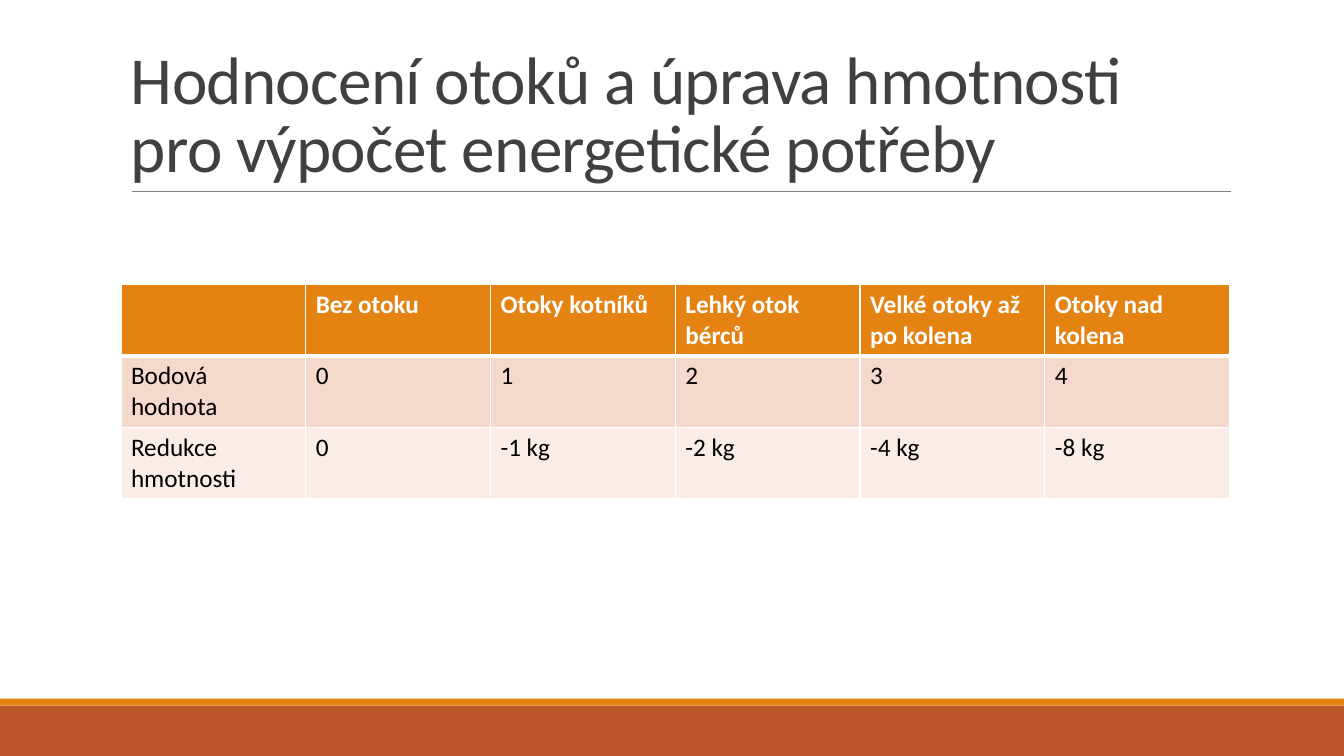
from dataclasses import dataclass

from pptx import Presentation
from pptx.dml.color import RGBColor
from pptx.enum.shapes import MSO_CONNECTOR as Connector, MSO_SHAPE as Preset
from pptx.enum.text import MSO_ANCHOR as Anchor
from pptx.oxml.ns import qn
from pptx.slide import Slide
from pptx.table import _Cell as Cell
from pptx.text.text import _Paragraph as Paragraph, _Run as Run
from pptx.util import Inches, Pt
from lxml.etree import SubElement

SLIDE_WIDTH, SLIDE_HEIGHT = Inches(13.33), Inches(7.5)
FONT = "Calibri"
ORANGE, RUST, WHITE = "E48312", "BD582C", "FFFFFF"
CONTENT_LEFT, CONTENT_WIDTH = 9, 82.5
TITLE = "Hodnocení otoků a úprava hmotnosti pro výpočet energetické potřeby"


@dataclass(frozen=True)
class FooterBand:
    top: float
    height: float
    color: str


@dataclass(frozen=True)
class TableRow:
    texts: tuple[str, ...]
    fill: str
    color: str = "000000"
    bold: bool = False
    bottom_border: float = 1


FOOTER_BANDS = (
    FooterBand(93.33, 6.67, RUST),
    FooterBand(92.4, 0.93, ORANGE),
)
EDEMA_ROWS = (
    TableRow(("", "Bez otoku", "Otoky kotníků", "Lehký otok bérců",
              "Velké otoky až po kolena", "Otoky nad kolena"),
             ORANGE, WHITE, True, 3),
    TableRow(("Bodová hodnota", "0", "1", "2", "3", "4"), "F5D9CC"),
    TableRow(("Redukce hmotnosti", "0", "-1 kg", "-2 kg", "-4 kg", "-8 kg"), "FAEDE7"),
)


def across(percent: float) -> int:
    """Length as a percentage of the slide width."""
    return round(SLIDE_WIDTH * percent / 100)


def down(percent: float) -> int:
    """Length as a percentage of the slide height."""
    return round(SLIDE_HEIGHT * percent / 100)


def rgb(color: str) -> RGBColor:
    return RGBColor.from_string(color)


def add_run(paragraph: Paragraph, text: str, size: float, color: str,
            bold: bool = False) -> Run:
    run = paragraph.add_run()
    run.text = text
    run.font.name = FONT
    run.font.size = Pt(size)
    run.font.bold = bold
    run.font.color.rgb = rgb(color)
    return run


def draw_band(slide: Slide, band: FooterBand) -> None:
    bar = slide.shapes.add_shape(Preset.RECTANGLE, 0, down(band.top),
                                 SLIDE_WIDTH, down(band.height))
    bar.shadow.inherit = False
    bar.fill.solid()
    bar.fill.fore_color.rgb = rgb(band.color)
    bar.line.fill.background()


def draw_title(slide: Slide) -> None:
    rule = slide.shapes.add_connector(Connector.STRAIGHT, across(9.83), down(25.33),
                                      across(91.6), down(25.33))
    rule.line.color.rgb = rgb("808080")
    rule.line.width = Pt(0.5)
    SubElement(rule._element.spPr, qn("a:effectLst"))

    heading = slide.shapes.add_textbox(across(CONTENT_LEFT), down(4.13),
                                       across(CONTENT_WIDTH), down(21.2)).text_frame
    heading.word_wrap = True
    heading.vertical_anchor = Anchor.BOTTOM
    paragraph = heading.paragraphs[0]
    paragraph.line_spacing = 0.85
    run = add_run(paragraph, TITLE, 48, "404040")
    run.font._element.set("spc", "-50")


def set_borders(cell: Cell, bottom: float) -> None:
    properties = cell._tc.get_or_add_tcPr()
    for side, width in (("L", 1), ("R", 1), ("T", 1), ("B", bottom)):
        border = SubElement(properties, qn(f"a:ln{side}"), w=str(Pt(width)))
        paint = SubElement(border, qn("a:solidFill"))
        SubElement(paint, qn("a:srgbClr"), val=WHITE)


def draw_table(slide: Slide, rows: tuple[TableRow, ...]) -> None:
    row_height = 9.47
    table = slide.shapes.add_table(
        len(rows), len(rows[0].texts), across(CONTENT_LEFT), down(37.6),
        across(CONTENT_WIDTH), down(row_height * len(rows))).table
    for row_index, row in enumerate(rows):
        for column_index, text in enumerate(row.texts):
            cell = table.cell(row_index, column_index)
            set_borders(cell, row.bottom_border)
            cell.fill.solid()
            cell.fill.fore_color.rgb = rgb(row.fill)
            if text:
                add_run(cell.text_frame.paragraphs[0], text, 18, row.color, row.bold)


def main() -> None:
    presentation = Presentation()
    presentation.slide_width, presentation.slide_height = SLIDE_WIDTH, SLIDE_HEIGHT
    slide = presentation.slides.add_slide(presentation.slide_layouts[6])
    for band in FOOTER_BANDS:
        draw_band(slide, band)
    draw_title(slide)
    draw_table(slide, EDEMA_ROWS)
    presentation.save("out.pptx")


if __name__ == "__main__":
    main()
